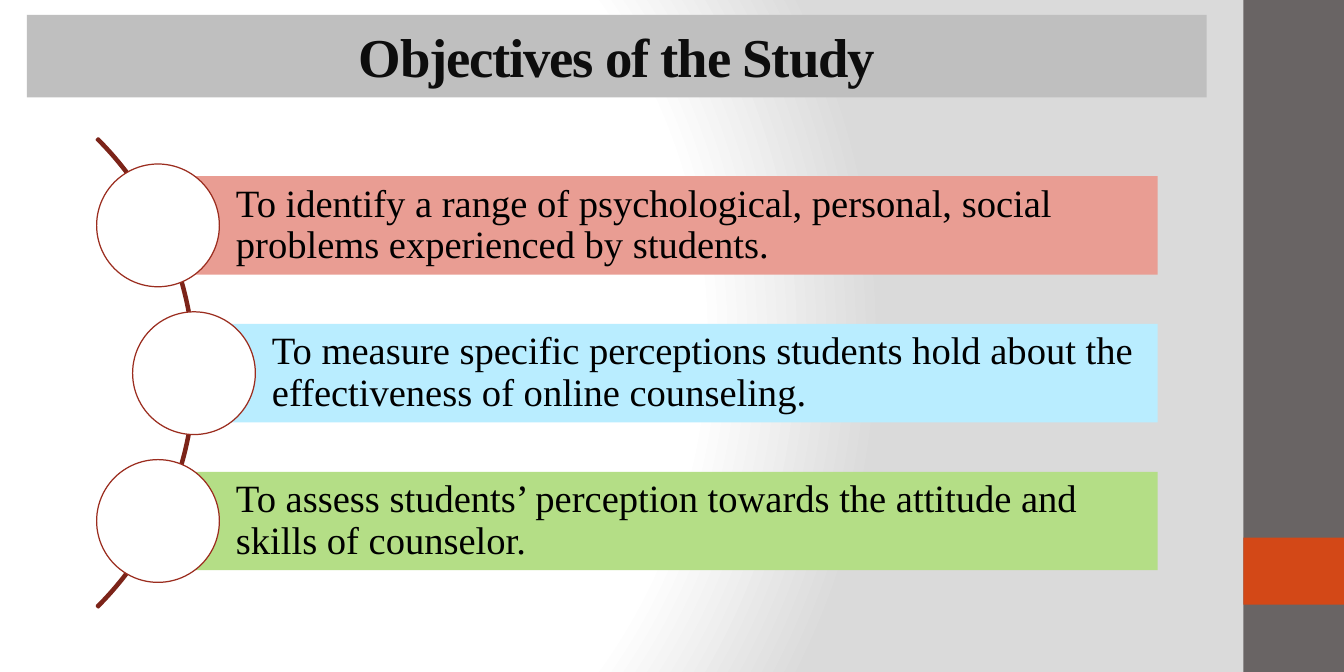
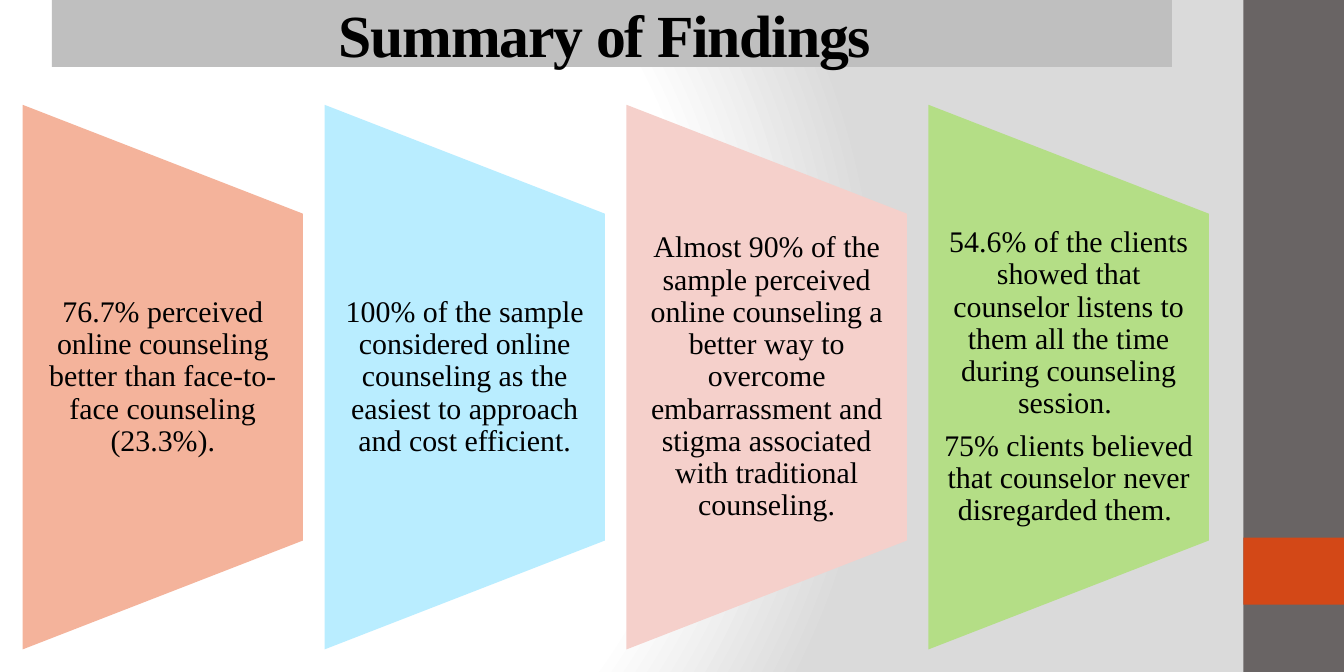
from pptx import Presentation
from pptx.dml.color import RGBColor
from pptx.enum.shapes import MSO_SHAPE as Preset
from pptx.enum.text import MSO_ANCHOR as Anchor, MSO_AUTO_SIZE as AutoSize, PP_ALIGN as Align
from pptx.oxml import parse_xml
from pptx.oxml.ns import nsdecls, qn
from pptx.util import Cm, Pt

FONT = "Times New Roman"
COLORS = {
    "white": "FFFFFF", "mist": "DADADA", "side": "696464", "accent": "D34817",
    "title band": "BFBFBF", "ink": "0D0D0D", "black": "000000",
    "arc": "7C2419", "ring": "9B2D1F", "coral": "E99D93", "sky": "B9EDFF",
    "green": "B4DE86", "peach": "F4B39B", "rose": "F5D0CB",
}
PAGE_W, PAGE_H = 38.1, 19.05
SIDE_X = 35.25


def rgb(name):
    return RGBColor.from_string(COLORS[name])


class Deck:
    """Holds the shared style and the slide being built; lengths are in cm."""

    def __init__(self):
        self.prs = Presentation()
        self.prs.slide_width, self.prs.slide_height = Cm(PAGE_W), Cm(PAGE_H)
        self.layout = self.prs.slide_layouts[5]
        self.slide = None
        self.set_background()

    def set_background(self):
        self.layout.background.fill.gradient()
        linear = self.layout.element.find(".//" + qn("a:gradFill"))
        stops = "".join(
            f'<a:gs pos="{pos}"><a:srgbClr val="{COLORS[name]}"/></a:gs>'
            for pos, name in ((0, "white"), (75000, "white"), (100000, "mist")))
        radial = parse_xml(
            f'<a:gradFill {nsdecls("a")} rotWithShape="1"><a:gsLst>{stops}</a:gsLst>'
            '<a:path path="circle"><a:fillToRect l="20000" t="50000" r="100000" b="50000"/>'
            '</a:path></a:gradFill>')
        linear.getparent().replace(linear, radial)

    def add_side_bands(self):
        """Draw the right-hand bands and move them to the shared layout."""
        for top, height, color in ((0, PAGE_H, "side"), (15.24, 1.9, "accent")):
            band = self.shape(Preset.RECTANGLE, SIDE_X, top, PAGE_W - SIDE_X, height, color)
            self.layout.shapes.element.append(band.element)

    def new_slide(self, heading, box, size, color):
        first = self.slide is None
        self.slide = self.prs.slides.add_slide(self.layout)
        if first:
            self.add_side_bands()
        title = self.slide.shapes.title
        title.left, title.top, title.width, title.height = (Cm(v) for v in box)
        title.fill.solid()
        title.fill.fore_color.rgb = rgb("title band")
        self.set_text(title, [heading], size, Align.CENTER, color=color, bold=True)
        for props in title.element.iter(qn("a:rPr")):
            props.set("spc", "-100")

    def shape(self, preset, x, y, w, h, fill=None, line=None, line_pt=1):
        item = self.slide.shapes.add_shape(preset, Cm(x), Cm(y), Cm(w), Cm(h))
        item.shadow.inherit = False
        if fill:
            item.fill.solid()
            item.fill.fore_color.rgb = rgb(fill)
        else:
            item.fill.background()
        if line:
            item.line.color.rgb = rgb(line)
            item.line.width = Pt(line_pt)
        else:
            item.line.fill.background()
        return item

    def textbox(self, x, y, w, h):
        return self.slide.shapes.add_textbox(Cm(x), Cm(y), Cm(w), Cm(h))

    def set_text(self, item, lines, size, align, color="black", bold=False,
                 spacing=None, after=None, insets=None):
        frame = item.text_frame
        frame.text = "\n".join(lines)
        frame.word_wrap = True
        frame.auto_size = AutoSize.NONE
        frame.vertical_anchor = Anchor.MIDDLE
        if insets:
            (frame.margin_left, frame.margin_top,
             frame.margin_right, frame.margin_bottom) = (Cm(v) for v in insets)
        for paragraph in frame.paragraphs:
            paragraph.alignment = align
            paragraph.line_spacing = spacing
            paragraph.space_after = after
            for run in paragraph.runs:
                font = run.font
                font.name, font.size, font.bold = FONT, Pt(size), bold
                font.color.rgb = rgb(color)

    def body(self, item, lines, size, align, insets):
        self.set_text(item, lines, size, align, spacing=0.9,
                      after=Pt(0.35 * size), insets=insets)


def build_objectives(deck):
    deck.new_slide("Objectives of the Study", (0.76, 0.42, 33.45, 2.34), 44, "ink")

    # Arc that carries the circles
    arc = deck.shape(Preset.BLOCK_ARC, -13.26, 1.17, 18.8, 18.8, line="arc", line_pt=2)
    for index, value in enumerate((189, 27, 0.003)):
        arc.adjustments[index] = value

    # One bar and one circle per objective
    objectives = (
        ("To identify a range of psychological, personal, social problems "
         "experienced by students.", 2.74, "coral"),
        ("To measure specific perceptions students hold about the effectiveness "
         "of online counseling.", 3.76, "sky"),
        ("To assess students’ perception towards the attitude and skills of counselor.",
         2.74, "green"),
    )
    top, pitch, circle, bar_h, bars_right = 4.65, 4.19, 3.48, 2.79, 32.82
    for row, (objective, circle_x, color) in enumerate(objectives):
        circle_y = top + row * pitch
        bar_x = circle_x + circle / 2
        bar = deck.shape(Preset.RECTANGLE, bar_x, circle_y + (circle - bar_h) / 2,
                         bars_right - bar_x, bar_h, color)
        deck.body(bar, [objective], 31, Align.LEFT, (2.21, 0.22, 0.22, 0.22))
        deck.shape(Preset.OVAL, circle_x, circle_y, circle, circle, "white", "ring")


def build_findings(deck):
    deck.new_slide("Summary of Findings ", (1.47, 0, 31.75, 1.9), 48, "black")

    # Four turned trapezoids, each with its finding
    findings = (
        (["76.7% perceived online counseling better than face-to-face "
          "counseling (23.3%)."], "peach"),
        (["100% of the sample considered online counseling as the easiest to "
          "approach and cost efficient."], "sky"),
        (["Almost 90% of the sample perceived online counseling a better way to "
          "overcome embarrassment and stigma associated with traditional "
          "counseling."], "rose"),
        (["54.6% of the clients showed that counselor listens to them all the "
          "time during counseling session. ",
          "75% clients believed that counselor never disregarded them. "], "green"),
    )
    left, pitch, middle = 0.64, 8.56, 10.69
    width, length, text_h = 7.95, 15.44, 9.27
    for column, (lines, color) in enumerate(findings):
        x = left + column * pitch
        panel = deck.shape(Preset.FLOWCHART_MANUAL_OPERATION, x + (width - length) / 2,
                           middle - width / 2, length, width, color)
        panel.rotation = 270
        finding = deck.textbox(x, middle - text_h / 2, width, text_h)
        deck.body(finding, lines, 24, Align.CENTER, (0.43, 0, 0.43, 0))


def main():
    deck = Deck()
    build_objectives(deck)
    build_findings(deck)
    deck.prs.save("out.pptx")


if __name__ == "__main__":
    main()
